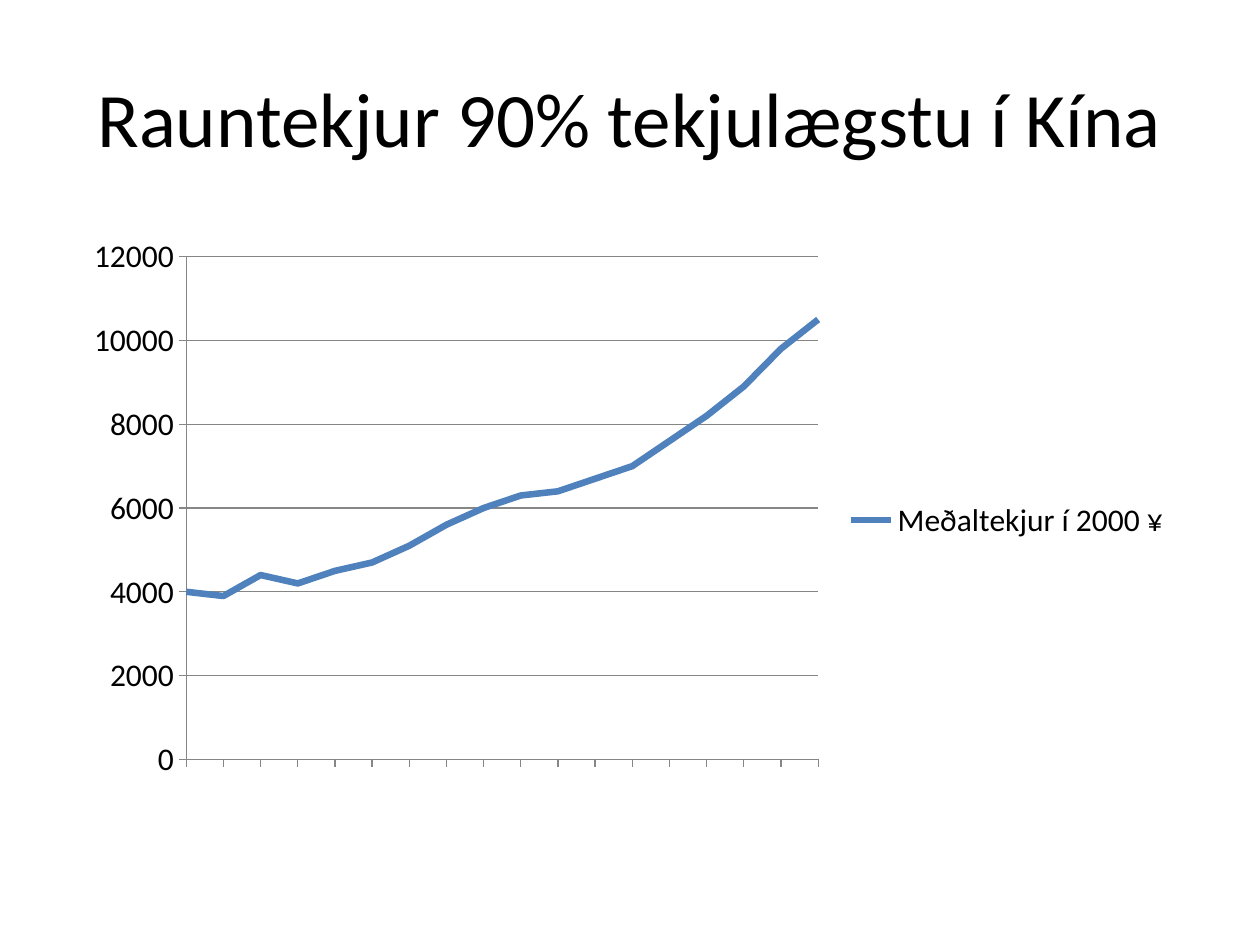
from dataclasses import dataclass

from lxml import etree
from pptx import Presentation
from pptx.chart.chart import Chart
from pptx.chart.data import CategoryChartData
from pptx.dml.color import RGBColor
from pptx.enum.chart import XL_CHART_TYPE, XL_LEGEND_POSITION, XL_TICK_LABEL_POSITION, XL_TICK_MARK
from pptx.enum.text import MSO_ANCHOR, PP_ALIGN
from pptx.oxml.ns import qn
from pptx.util import Cm, Pt

LINE = XL_CHART_TYPE.LINE
RIGHT = XL_LEGEND_POSITION.RIGHT
NO_LABELS = XL_TICK_LABEL_POSITION.NONE
OUTSIDE, NO_TICK = XL_TICK_MARK.OUTSIDE, XL_TICK_MARK.NONE
MIDDLE, CENTER = MSO_ANCHOR.MIDDLE, PP_ALIGN.CENTER


@dataclass(frozen=True)
class Theme:
    font: str = "Calibri"
    text: RGBColor = RGBColor(0, 0, 0)
    grid: RGBColor = RGBColor(0x86, 0x86, 0x86)
    income: RGBColor = RGBColor(0x4F, 0x81, 0xBD)
    title_size: int = 44
    chart_size: int = 18
    grid_width: float = 0.75
    income_width: float = 3.75


@dataclass(frozen=True)
class Box:
    left: float
    top: float
    width: float
    height: float

    def lengths(self) -> tuple:
        return Cm(self.left), Cm(self.top), Cm(self.width), Cm(self.height)


THEME = Theme()
TITLE_BOX = Box(1.27, 0.76, 22.86, 3.18)
CHART_BOX = Box(1.52, 4.45, 22.35, 12.07)
PLOT_LAYOUT = {"x": 0.1, "y": 0.06, "w": 0.57, "h": 0.84}
INCOMES = (4000, 3900, 4400, 4200, 4500, 4700, 5100, 5600, 6000,
           6300, 6400, 6700, 7000, 7600, 8200, 8900, 9800, 10500)


def apply(target, formats: dict) -> None:
    for name, value in formats.items():
        setattr(target, name, value)


def style_font(font, size: int) -> None:
    apply(font, {"name": THEME.font, "size": Pt(size), "bold": False})
    font.color.rgb = THEME.text


def style_line(line, color: RGBColor, width: float) -> None:
    line.color.rgb = color
    line.width = Pt(width)


def add_title(s, text: str) -> None:
    tf = s.shapes.add_textbox(*TITLE_BOX.lengths()).text_frame
    apply(tf, {"word_wrap": True, "vertical_anchor": MIDDLE})
    p = tf.paragraphs[0]
    p.alignment = CENTER
    r = p.add_run()
    r.text = text
    style_font(r.font, THEME.title_size)


def set_plot_layout(chart: Chart) -> None:
    plot_area = chart._chartSpace.chart.plotArea
    for old in plot_area.findall(qn("c:layout")):
        plot_area.remove(old)
    layout = etree.Element(qn("c:layout"))
    manual = etree.SubElement(layout, qn("c:manualLayout"))
    settings = {"layoutTarget": "inner", "xMode": "edge", "yMode": "edge", **PLOT_LAYOUT}
    for tag, value in settings.items():
        etree.SubElement(manual, qn(f"c:{tag}")).set("val", str(value))
    plot_area.insert(0, layout)


def start_line_on_axis(chart: Chart) -> None:
    axis = chart.value_axis._element
    cross = axis.find(qn("c:crossBetween"))
    if cross is None:
        cross = etree.Element(qn("c:crossBetween"))
        axis.find(qn("c:crosses")).addnext(cross)
    cross.set("val", "midCat")


def add_income_chart(s) -> None:
    data = CategoryChartData(number_format="General")
    data.categories = [""] * len(INCOMES)
    data.add_series("Meðaltekjur í 2000 ¥", INCOMES)
    chart = s.shapes.add_chart(LINE, *CHART_BOX.lengths(), data).chart
    style_font(chart.font, THEME.chart_size)
    apply(chart, {"has_title": False, "has_legend": True})
    apply(chart.legend, {"position": RIGHT, "include_in_layout": False})
    chart.plots[0].vary_by_categories = False

    series = chart.plots[0].series[0]
    series.smooth = False
    style_line(series.format.line, THEME.income, THEME.income_width)

    for axis in (chart.category_axis, chart.value_axis):
        apply(axis, {"major_tick_mark": OUTSIDE, "minor_tick_mark": NO_TICK})
        style_line(axis.format.line, THEME.grid, THEME.grid_width)
    chart.category_axis.tick_label_position = NO_LABELS
    start_line_on_axis(chart)
    apply(chart.value_axis, {"minimum_scale": 0, "maximum_scale": 12000,
                             "major_unit": 2000, "has_major_gridlines": True})
    style_line(chart.value_axis.major_gridlines.format.line, THEME.grid, THEME.grid_width)
    set_plot_layout(chart)


def main() -> None:
    prs = Presentation()
    apply(prs, {"slide_width": Cm(25.4), "slide_height": Cm(19.05)})
    s = prs.slides.add_slide(prs.slide_layouts[6])
    add_title(s, "Rauntekjur 90% tekjulægstu í Kína")
    add_income_chart(s)
    prs.save("out.pptx")


if __name__ == "__main__":
    main()
